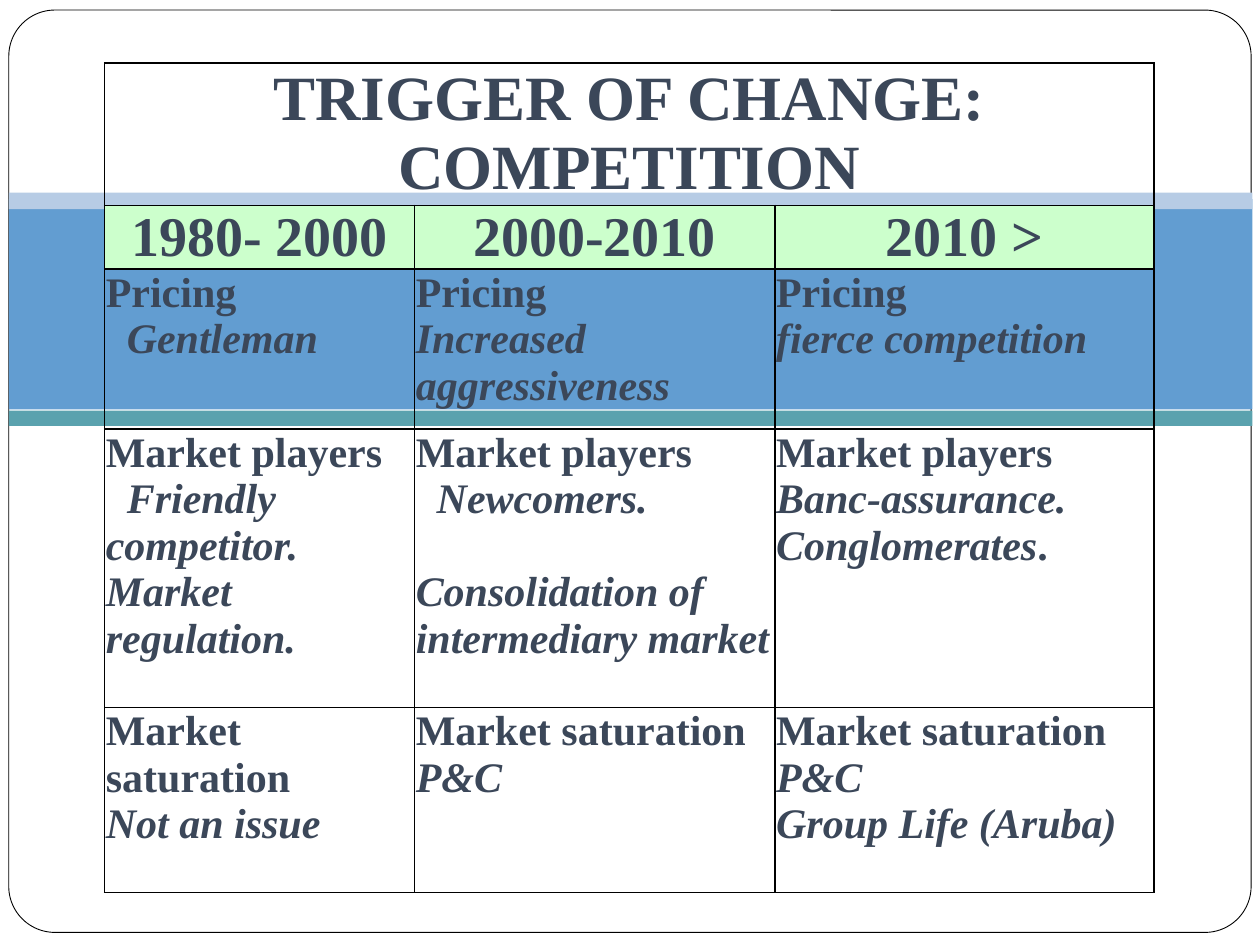
"""Build a slide with a table on how competition triggers change."""
from dataclasses import dataclass

from lxml import etree
from pptx import Presentation
from pptx.dml.color import RGBColor
from pptx.enum.shapes import MSO_SHAPE
from pptx.enum.text import MSO_ANCHOR, PP_ALIGN
from pptx.oxml.ns import qn
from pptx.util import Inches, Pt

RECT, ROUNDED = MSO_SHAPE.RECTANGLE, MSO_SHAPE.ROUNDED_RECTANGLE
CENTER, LEFT = PP_ALIGN.CENTER, PP_ALIGN.LEFT
TOP = MSO_ANCHOR.TOP

GRID_COLS, GRID_ROWS = 100, 75
UNIT = Inches(10) // GRID_COLS
FONT = "Times New Roman"
TITLE_SIZE, PERIOD_SIZE, BODY_SIZE = 36, 32, 24
BODY_LINE = 26.6
COLORS = {
    "frame": "FFFFFF", "line": "000000", "text": "3B4759", "period": "CCFFCC",
    "band": "629DD1", "band_top": "B7CCE5", "band_bottom": "5AA2AE",
}


@dataclass(frozen=True)
class Panel:
    """A background shape measured in grid units."""
    left: float
    top: float
    width: float
    height: float
    color: str
    kind: int = RECT
    outlined: bool = False


@dataclass(frozen=True)
class Run:
    """A piece of text in one style."""
    text: str
    italic: bool = False


@dataclass(frozen=True)
class Para:
    """A paragraph of runs with its size and spacing."""
    runs: tuple[Run, ...]
    size: float = BODY_SIZE
    align: int = LEFT
    indent: float = 0
    before: float = 0


PANELS = (
    Panel(0.7, 0.8, 98.6, 73.2, "frame", ROUNDED, True),
    Panel(0.7, 15.8, 98.7, 16.7, "band"),
    Panel(0.7, 15.3, 98.7, 1.3, "band_top"),
    Panel(0.7, 32.6, 98.7, 1.2, "band_bottom"),
)
TABLE_LEFT, TABLE_TOP = 8.3, 5
COL_WIDTHS = (24.6, 28.6, 30.1)
ROW_HEIGHTS = (11.3, 5, 12.7, 22.1, 14.7)


def heading(text: str, size: float) -> Para:
    """Return a centred heading paragraph."""
    return Para((Run(text),), size, CENTER)


def topic(text: str) -> Para:
    """Return an upright topic paragraph."""
    return Para((Run(text),))


def remark(text: str, indent: float = 0, before: float = 0) -> Para:
    """Return an italic remark paragraph."""
    return Para((Run(text, True),), indent=indent, before=before)


TITLE = [heading(text, TITLE_SIZE) for text in ("TRIGGER OF CHANGE:", "COMPETITION")]
PERIODS = ("1980- 2000", "2000-2010", "2010 >")
TOPICS = (
    ("Pricing", (
        [remark("Gentleman", 12)],
        [remark("Increased aggressiveness")],
        [remark("fierce competition")],
    )),
    ("Market players", (
        [remark("Friendly competitor. Market regulation.", 12)],
        [remark("Newcomers.", 12),
         remark("Consolidation of intermediary market", before=BODY_LINE)],
        [Para((Run("Banc-assurance. Conglomerates", True), Run(".")))],
    )),
    ("Market saturation", (
        [remark("Not an issue")],
        [remark("P&C")],
        [remark("P&C"), remark("Group Life (Aruba)")],
    )),
)


def rgb(name: str) -> RGBColor:
    """Look up a named colour."""
    return RGBColor.from_string(COLORS[name])


def units(value: float) -> int:
    """Turn grid units into a length."""
    return round(value * UNIT)


def draw_panel(s, panel: Panel) -> None:
    """Draw one background shape."""
    box = (panel.left, panel.top, panel.width, panel.height)
    sp = s.shapes.add_shape(panel.kind, *map(units, box))
    sp.shadow.inherit = False
    sp.fill.solid()
    sp.fill.fore_color.rgb = rgb(panel.color)
    if panel.kind == ROUNDED:
        sp.adjustments[0] = 0.05
    if panel.outlined:
        sp.line.color.rgb = rgb("line")
        sp.line.width = Pt(0.5)
    else:
        sp.line.fill.background()


def style_cell(cell, color: str | None = None) -> None:
    """Set the margins, borders and fill of a cell."""
    cell.margin_left = cell.margin_right = cell.margin_top = Inches(0.01)
    cell.margin_bottom = 0
    cell.vertical_anchor = TOP
    tc_pr = cell._tc.get_or_add_tcPr()
    for side in ("a:lnL", "a:lnR", "a:lnT", "a:lnB"):
        ln = etree.SubElement(tc_pr, qn(side), w=str(Pt(1)))
        fill = etree.SubElement(ln, qn("a:solidFill"))
        etree.SubElement(fill, qn("a:srgbClr"), val=COLORS["line"])
    if color:
        cell.fill.solid()
        cell.fill.fore_color.rgb = rgb(color)
    else:
        cell.fill.background()


def write_cell(cell, paras: list[Para]) -> None:
    """Write paragraphs into a cell."""
    tf = cell.text_frame
    for i, para in enumerate(paras):
        p = tf.add_paragraph() if i else tf.paragraphs[0]
        p.alignment = para.align
        if para.before:
            p.space_before = Pt(para.before)
        if para.indent:
            p._p.get_or_add_pPr().set("indent", str(Pt(para.indent)))
        for run in para.runs:
            r = p.add_run()
            r.text = run.text
            r.font.name, r.font.size = FONT, Pt(para.size)
            r.font.bold, r.font.italic = True, run.italic
            r.font.color.rgb = rgb("text")


def draw_table(s) -> None:
    """Draw the table of periods and topics."""
    box = (TABLE_LEFT, TABLE_TOP, sum(COL_WIDTHS), sum(ROW_HEIGHTS))
    frame = s.shapes.add_table(len(ROW_HEIGHTS), len(COL_WIDTHS), *map(units, box))
    table = frame.table
    table.first_row = table.horz_banding = False
    for col, width in zip(table.columns, COL_WIDTHS):
        col.width = units(width)
    for i, (row, height) in enumerate(zip(table.rows, ROW_HEIGHTS)):
        row.height = units(height)
        for cell in row.cells:
            style_cell(cell, "period" if i == 1 else None)
    table.cell(0, 0).merge(table.cell(0, len(COL_WIDTHS) - 1))
    write_cell(table.cell(0, 0), TITLE)
    for j, period in enumerate(PERIODS):
        write_cell(table.cell(1, j), [heading(period, PERIOD_SIZE)])
    for i, (name, remarks) in enumerate(TOPICS, 2):
        for j, paras in enumerate(remarks):
            write_cell(table.cell(i, j), [topic(name), *paras])


def main() -> None:
    """Build and save the slide."""
    prs = Presentation()
    prs.slide_width, prs.slide_height = units(GRID_COLS), units(GRID_ROWS)
    s = prs.slides.add_slide(prs.slide_layouts.get_by_name("Blank"))
    for panel in PANELS:
        draw_panel(s, panel)
    draw_table(s)
    prs.save("out.pptx")


if __name__ == "__main__":
    main()
